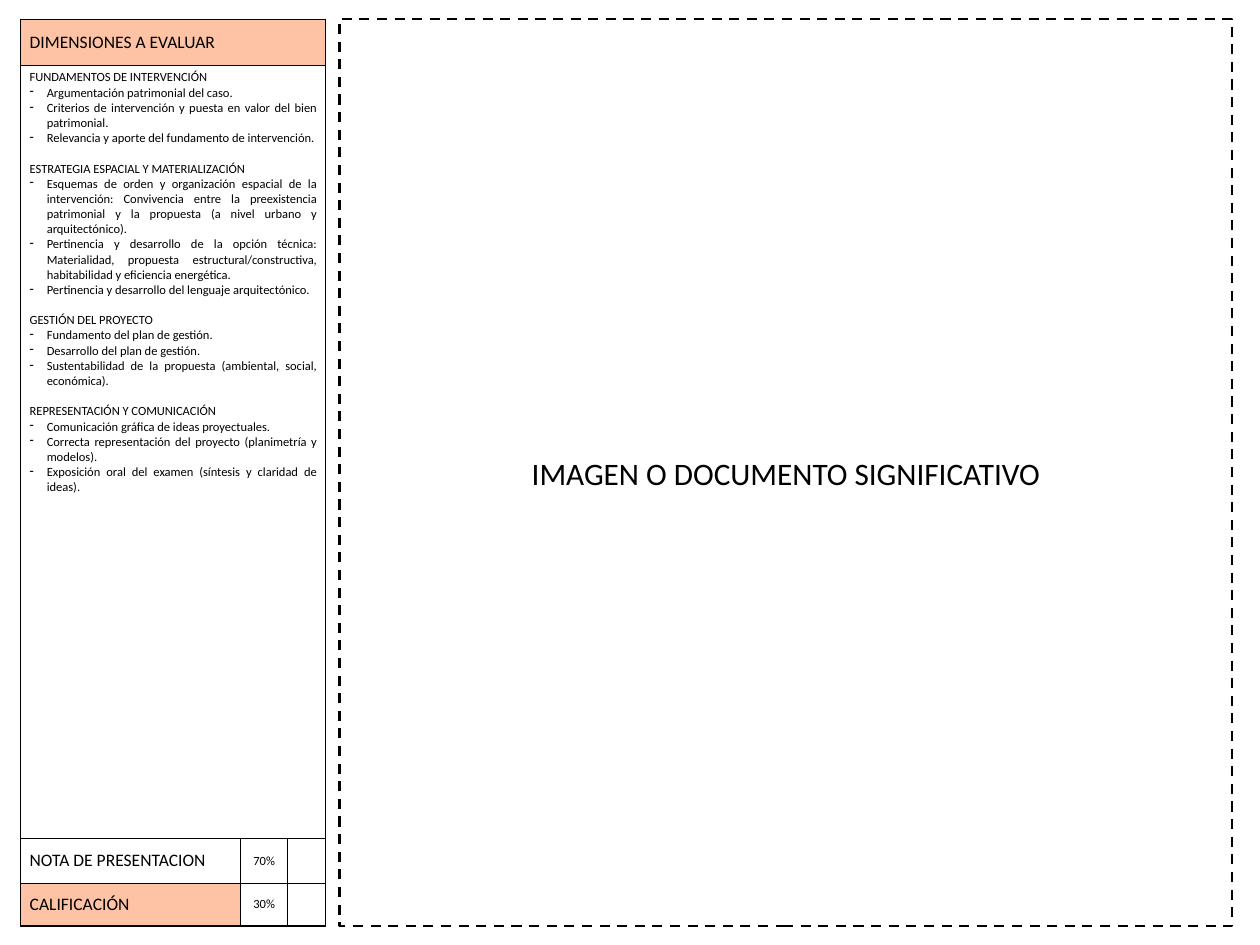
from lxml.etree import SubElement
from pptx import Presentation
from pptx.dml.color import RGBColor
from pptx.enum.dml import MSO_LINE
from pptx.enum.shapes import MSO_SHAPE
from pptx.enum.text import MSO_ANCHOR, PP_ALIGN
from pptx.oxml import parse_xml
from pptx.oxml.ns import nsdecls, qn
from pptx.util import Inches, Pt

BLACK = RGBColor(0x00, 0x00, 0x00)
PEACH = RGBColor(0xFD, 0xC3, 0xA4)
WHITE = RGBColor(0xFF, 0xFF, 0xFF)
FONT = "Calibri"

COLUMN_WIDTHS = (2.44, 0.53, 0.42)
ROW_HEIGHTS = (0.52, 8.59, 0.49, 0.48)
GRADES = (("NOTA DE PRESENTACION", "70%", WHITE), ("CALIFICACIÓN", "30%", PEACH))
DIMENSIONS = {
    "FUNDAMENTOS DE INTERVENCIÓN": (
        "Argumentación patrimonial del caso.",
        "Criterios de intervención y puesta en valor del bien patrimonial.",
        "Relevancia y aporte del fundamento de intervención.",
    ),
    "ESTRATEGIA ESPACIAL Y MATERIALIZACIÓN": (
        "Esquemas de orden y organización espacial de la intervención: Convivencia entre "
        "la preexistencia patrimonial y la propuesta (a nivel urbano y arquitectónico).",
        "Pertinencia y desarrollo de la opción técnica: Materialidad, propuesta "
        "estructural/constructiva, habitabilidad y eficiencia energética.",
        "Pertinencia y desarrollo del lenguaje arquitectónico.",
    ),
    "GESTIÓN DEL PROYECTO": (
        "Fundamento del plan de gestión.",
        "Desarrollo del plan de gestión.",
        "Sustentabilidad de la propuesta (ambiental, social, económica).",
    ),
    "REPRESENTACIÓN Y COMUNICACIÓN": (
        "Comunicación gráfica de ideas proyectuales.",
        "Correcta representación del proyecto (planimetría y modelos).",
        "Exposición oral del examen (síntesis y claridad de ideas).",
    ),
}


def write(para, text, size, align=PP_ALIGN.LEFT):
    """Set a paragraph's text, size and alignment in the slide's font."""
    para.text = text
    para.alignment = align
    for span in para.runs:
        span.font.name = FONT
        span.font.size = Pt(size)
        span.font.color.rgb = BLACK


def add_dash_bullet(para):
    """Give a paragraph a hanging dash."""
    properties = para._p.get_or_add_pPr()
    properties.set("marL", str(Inches(0.19)))
    properties.set("indent", str(-Inches(0.19)))
    SubElement(properties, qn("a:buChar"), char="-")


def set_borders(cell, **widths):
    """Draw black borders on the given sides L, R, T, B, in points."""
    properties = cell._tc.get_or_add_tcPr()
    for position, (side, width) in enumerate(widths.items()):
        properties.insert(position, parse_xml(
            f'<a:ln{side} {nsdecls("a")} w="{Pt(width)}"><a:solidFill>'
            f'<a:srgbClr val="{BLACK}"/></a:solidFill></a:ln{side}>'))


def fill_cell(cell, text, size, align=PP_ALIGN.LEFT, color=None):
    """Write one centred-height cell and paint it when a colour is given."""
    cell.vertical_anchor = MSO_ANCHOR.MIDDLE
    write(cell.text_frame.paragraphs[0], text, size, align)
    if color is not None:
        cell.fill.solid()
        cell.fill.fore_color.rgb = color


def fill_dimensions(cell):
    """List each dimension heading with its criteria."""
    frame = cell.text_frame
    for number, (heading, criteria) in enumerate(DIMENSIONS.items()):
        para = frame.add_paragraph() if number else frame.paragraphs[0]
        write(para, heading, 10, PP_ALIGN.JUSTIFY)
        para.space_before = Pt(12.2 if number else 0)
        for criterion in criteria:
            para = frame.add_paragraph()
            write(para, criterion, 10, PP_ALIGN.JUSTIFY)
            add_dash_bullet(para)


def add_evaluation_table(page, left, top, width, height):
    """Place the evaluation table in the given box."""
    table = page.shapes.add_table(
        len(ROW_HEIGHTS), len(COLUMN_WIDTHS), left, top, width, height).table
    table.first_row = table.horz_banding = False
    for column, size in zip(table.columns, COLUMN_WIDTHS):
        column.width = Inches(size)
    for row, size in zip(table.rows, ROW_HEIGHTS):
        row.height = Inches(size)
    for cell in table.iter_cells():
        cell.fill.background()

    last = len(COLUMN_WIDTHS) - 1
    for row in (0, 1):
        table.cell(row, 0).merge(table.cell(row, last))
        for column in range(last + 1):
            set_borders(table.cell(row, column), L=1, R=1, T=1 if row else 0.5, B=1)
    fill_cell(table.cell(0, 0), "DIMENSIONES A EVALUAR", 14, color=PEACH)
    fill_dimensions(table.cell(1, 0))

    for row, (label, share, color) in enumerate(GRADES, start=2):
        fill_cell(table.cell(row, 0), label, 14, color=color)
        fill_cell(table.cell(row, 1), share, 10, PP_ALIGN.CENTER)
        for column in range(last + 1):
            set_borders(table.cell(row, column),
                        L=0.5 if column == 1 else 1, R=0.5 if column == 0 else 1,
                        T=1 if row == 2 else 0.5, B=0.5 if row == 2 else 1)


def add_document_frame(page, left, top, width, height):
    """Place the dashed frame reserved for the main document."""
    box = page.shapes.add_shape(MSO_SHAPE.RECTANGLE, left, top, width, height)
    box.shadow.inherit = False
    box.fill.background()
    box.line.color.rgb = BLACK
    box.line.width = Pt(2)
    box.line.dash_style = MSO_LINE.DASH
    box.text_frame.word_wrap = True
    box.text_frame.vertical_anchor = MSO_ANCHOR.MIDDLE
    write(box.text_frame.paragraphs[0], "IMAGEN O DOCUMENTO SIGNIFICATIVO", 25,
          PP_ALIGN.CENTER)


def main():
    """Build and save the evaluation slide."""
    deck = Presentation()
    deck.slide_width, deck.slide_height = Inches(14), Inches(10.5)
    page = deck.slides.add_slide(deck.slide_layouts[6])
    top, height = Inches(0.21), Inches(10.08)
    add_document_frame(page, Inches(3.77), top, Inches(9.92), height)
    add_evaluation_table(page, Inches(0.23), top, Inches(3.39), height)
    deck.save("out.pptx")


if __name__ == "__main__":
    main()
